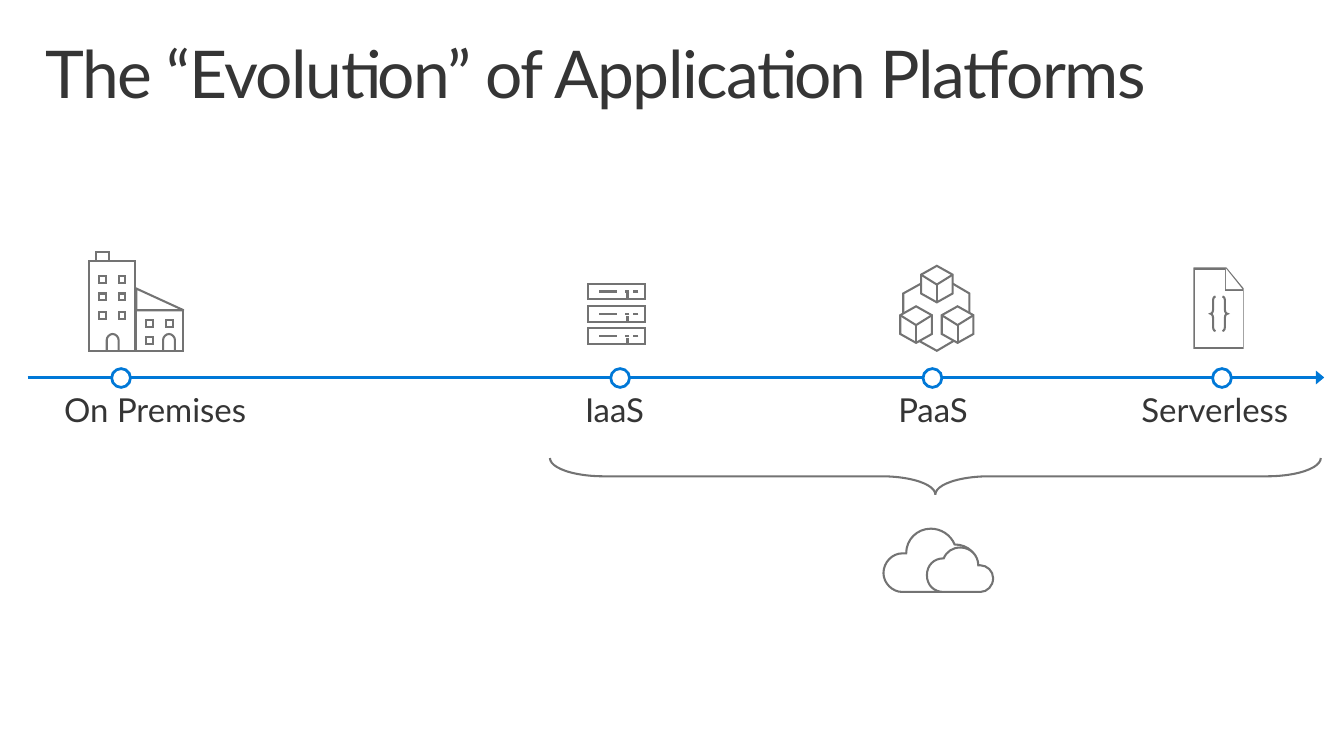
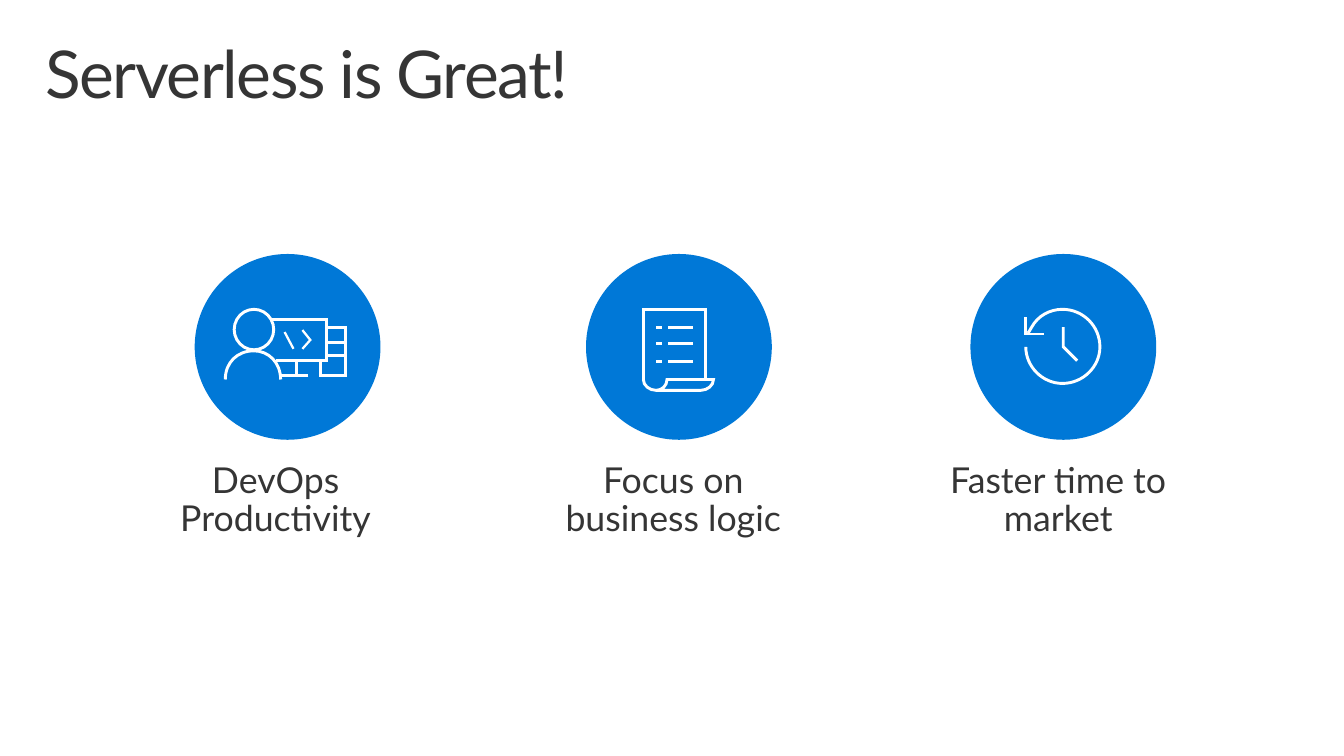
from dataclasses import dataclass
from typing import Callable, Optional, Sequence

from lxml import etree
from pptx import Presentation
from pptx.dml.color import RGBColor
from pptx.enum import shapes as kinds, text
from pptx.oxml.ns import qn
from pptx.util import Inches, Pt

FONT = "Lato"
INK = RGBColor(0x35, 0x35, 0x35)
BLUE = RGBColor(0x00, 0x78, 0xD7)
GRAY = RGBColor(0x73, 0x73, 0x73)
WHITE = RGBColor(0xFF, 0xFF, 0xFF)
PRESET = kinds.MSO_SHAPE

# A contour step is (x, y) for a line or (x1, y1, x2, y2, x, y) for a Bézier curve.
Contour = Sequence[tuple[float, ...]]


@dataclass(frozen=True)
class Pen:
    color: RGBColor
    width: float


GRAY_PEN = Pen(GRAY, 1.5)
BLUE_PEN = Pen(BLUE, 2)
WHITE_PEN = Pen(WHITE, 2.13)
THIN_WHITE_PEN = Pen(WHITE, 1.63)
PAPER_PEN = Pen(WHITE, 2.25)


@dataclass(frozen=True)
class Station:
    label: str
    label_left: float
    label_width: float
    wrap: bool
    dot_left: float
    draw_icon: Callable


@dataclass(frozen=True)
class Benefit:
    caption: str
    caption_left: float
    caption_width: float
    badge_left: float
    draw_icon: Callable


def apply_pen(shape, pen: Pen):
    """Set colour, width and sharp corners; return the a:ln element."""
    shape.line.color.rgb = pen.color
    shape.line.width = Pt(pen.width)
    outline = shape.element.spPr.find(qn("a:ln"))
    etree.SubElement(outline, qn("a:miter"), lim="800000")
    return outline


def paint(shape, pen: Optional[Pen], fill: Optional[RGBColor] = None):
    shape.shadow.inherit = False
    if fill is None:
        shape.fill.background()
    else:
        shape.fill.solid()
        shape.fill.fore_color.rgb = fill
    if pen is None:
        shape.line.fill.background()
    else:
        apply_pen(shape, pen)
    return shape


def add_preset(parent, kind, left: float, top: float, width: float, height: float,
               pen: Optional[Pen], fill: Optional[RGBColor] = None):
    shape = parent.add_shape(kind, Inches(left), Inches(top), Inches(width), Inches(height))
    return paint(shape, pen, fill)


def add_line(parent, start: tuple[float, float], end: tuple[float, float], pen: Pen,
             arrow: bool = False) -> None:
    line = parent.add_connector(kinds.MSO_CONNECTOR.STRAIGHT,
                                *(Inches(value) for value in start + end))
    outline = apply_pen(line, pen)
    if arrow:
        etree.SubElement(outline, qn("a:tailEnd"), type="triangle", w="lg", len="med")
    etree.SubElement(line.element.spPr, qn("a:effectLst"))


def bend(shape, steps: Contour) -> None:
    """Turn the straight segments of a freeform into curves where a step asks for it."""
    segments = list(shape.element.iter(qn("a:lnTo")))
    for segment, step in zip(segments, steps):
        if len(step) == 6:
            segment.tag = qn("a:cubicBezTo")
            for index in (0, 1):
                x, y = step[2 * index:2 * index + 2]
                control = etree.Element(qn("a:pt"), x=str(Inches(x) - shape.left),
                                        y=str(Inches(y) - shape.top))
                segment.insert(index, control)


def add_outline(parent, contours: Sequence[Contour], pen: Pen,
                fill: Optional[RGBColor] = None, closed: bool = False) -> None:
    first, *others = [[(Inches(step[-2]), Inches(step[-1])) for step in contour]
                      for contour in contours]
    builder = parent.build_freeform(*first[0], scale=1.0)
    builder.add_line_segments(first[1:], close=closed)
    for points in others:
        builder.move_to(*points[0])
        builder.add_line_segments(points[1:], close=closed)
    shape = paint(builder.convert_to_shape(), pen, fill)
    bend(shape, [step for contour in contours for step in contour[1:]])


def add_text(page, words: str, left: float, top: float, width: float, height: float,
             size: float, insets: tuple[float, float, float, float], wrap: bool = True,
             grow: bool = True, space_after: float = 0, align=text.PP_ALIGN.LEFT):
    box = page.shapes.add_textbox(Inches(left), Inches(top), Inches(width), Inches(height))
    frame = box.text_frame
    frame.margin_left, frame.margin_top, frame.margin_right, frame.margin_bottom = (
        Inches(inset) for inset in insets)
    frame.word_wrap = wrap
    frame.auto_size = (text.MSO_AUTO_SIZE.SHAPE_TO_FIT_TEXT if grow
                       else text.MSO_AUTO_SIZE.NONE)
    frame.text = words
    para = frame.paragraphs[0]
    para.alignment = align
    para.line_spacing = 0.9
    para.space_after = Pt(space_after)
    span = para.runs[0]
    span.font.name = FONT
    span.font.size = Pt(size)
    span.font.color.rgb = INK
    return span


def add_page(deck, title: str):
    page = deck.slides.add_slide(deck.slide_layouts[6])
    page.background.fill.solid()
    page.background.fill.fore_color.rgb = WHITE
    span = add_text(page, title, 0.3, 0.32, 13, 1, 48, (0.16, 0.1, 0.16, 0.1), grow=False)
    span.font._element.set("spc", "-104")
    return page


def draw_office(icon) -> None:
    def rect(left: float, top: float, width: float, height: float) -> None:
        add_preset(icon, PRESET.RECTANGLE, left, top, width, height, GRAY_PEN)

    rect(0.9, 2.64, 0.47, 0.91)
    rect(0.97, 2.55, 0.13, 0.09)
    rect(1.38, 3.14, 0.47, 0.41)
    windows = [(x, y) for y in (2.79, 2.97, 3.16) for x in (1, 1.2)]
    for x, y in windows + [(1.48, 3.24), (1.68, 3.24), (1.48, 3.41)]:
        rect(x, y, 0.07, 0.07)
    for x in (1.08, 1.65):
        add_outline(icon, [[(x + 0.12, 3.55), (x + 0.12, 3.44),
                            (x + 0.12, 3.41, x + 0.09, 3.38, x + 0.06, 3.38),
                            (x + 0.03, 3.38, x, 3.41, x, 3.44), (x, 3.55)]], GRAY_PEN)
    roof = add_preset(icon, PRESET.ISOSCELES_TRIANGLE, 1.38, 2.92, 0.48, 0.22, GRAY_PEN)
    roof.adjustments[0] = 0


def draw_servers(icon) -> None:
    for index in range(3):
        top = 2.87 + 0.225 * index
        middle = top + 0.08
        add_preset(icon, PRESET.RECTANGLE, 5.95, top, 0.58, 0.16, GRAY_PEN)
        for start, end in ((6.46, 6.41), (6.37, 6.32), (6.24, 6.06)):
            add_line(icon, (start, middle), (end, middle), GRAY_PEN)
        add_line(icon, (6.35, top + 0.16), (6.35, top + 0.1), GRAY_PEN)


def draw_cubes(icon) -> None:
    for x, y in ((9.69, 3.1), (9.27, 3.1), (9.48, 2.69)):
        left, right, shoulder, foot = x - 0.16, x + 0.16, y + 0.09, y + 0.28
        add_outline(icon, [[(left, shoulder), (x, y), (right, shoulder), (right, foot),
                            (x, y + 0.37), (left, foot)]], GRAY_PEN, closed=True)
        add_outline(icon, [[(right, shoulder), (x, y + 0.19), (left, shoulder)]], GRAY_PEN)
        add_line(icon, (x, y + 0.18), (x, y + 0.37), GRAY_PEN)
    for link in ([(9.65, 3.45), (9.48, 3.55), (9.3, 3.45)],
                 [(9.64, 2.87), (9.81, 2.97), (9.81, 3.17)],
                 [(9.14, 3.17), (9.14, 2.97), (9.32, 2.87)]):
        add_outline(icon, [link], GRAY_PEN)


def draw_code_file(icon) -> None:
    border = [(12.6, 2.91), (12.42, 2.69), (12.06, 2.69), (12.06, 3.55), (12.6, 3.55)]
    fold = [(12.42, 2.76), (12.54, 2.91), (12.42, 2.91)]
    sheet = [(12.11, 3.5), (12.11, 2.75), (12.38, 2.75), (12.38, 2.96), (12.56, 2.96),
             (12.56, 3.5)]
    add_outline(icon, [border, fold, sheet], PAPER_PEN, GRAY, closed=True)
    for kind, left in ((PRESET.LEFT_BRACE, 12.25), (PRESET.RIGHT_BRACE, 12.37)):
        brace = add_preset(icon, kind, left, 3, 0.05, 0.35, GRAY_PEN)
        brace.adjustments[0] = 0.8


def draw_clouds(page) -> None:
    add_outline(page.shapes, [[
        (9.17, 5.6), (9.17, 5.46, 9.28, 5.35, 9.42, 5.35),
        (9.52, 5.35, 9.62, 5.41, 9.66, 5.51), (9.8, 5.51, 9.9, 5.61, 9.9, 5.75),
        (9.9, 5.88, 9.8, 5.99, 9.66, 5.99), (9.13, 5.99),
        (9.03, 5.99, 8.94, 5.9, 8.94, 5.8), (8.94, 5.69, 9.03, 5.6, 9.13, 5.6),
    ]], GRAY_PEN, closed=True)
    add_outline(page.shapes, [[
        (9.9, 5.72), (9.9, 5.62, 9.82, 5.54, 9.72, 5.54),
        (9.64, 5.54, 9.58, 5.58, 9.55, 5.65), (9.45, 5.65, 9.38, 5.72, 9.38, 5.82),
        (9.38, 5.92, 9.45, 5.99, 9.55, 5.99), (9.92, 5.99),
        (9.99, 5.99, 10.05, 5.93, 10.05, 5.85), (10.05, 5.78, 9.99, 5.72, 9.92, 5.72),
    ]], GRAY_PEN, WHITE, closed=True)


def draw_developer(icon) -> None:
    add_preset(icon, PRESET.OVAL, 2.37, 3.13, 0.4, 0.41, WHITE_PEN)
    shoulders = [(2.84, 3.84), (2.84, 3.67, 2.72, 3.55, 2.57, 3.55),
                 (2.4, 3.55, 2.28, 3.67, 2.28, 3.84)]
    screen = [(2.79, 3.65), (3.3, 3.65), (3.3, 3.23), (2.74, 3.23)]
    tower = [(3.3, 3.31), (3.5, 3.31), (3.5, 3.8), (3.24, 3.8), (3.24, 3.65)]
    for contour in (shoulders, screen, tower):
        add_outline(icon, [contour], WHITE_PEN)
    for start, end in (((3, 3.8), (3, 3.65)), ((3.12, 3.8), (2.82, 3.8)),
                       ((3.5, 3.47), (3.3, 3.47)), ((3.5, 3.6), (3.3, 3.6))):
        add_line(icon, start, end, WHITE_PEN)
    add_line(icon, (2.88, 3.36), (2.97, 3.53), THIN_WHITE_PEN)
    add_outline(icon, [[(3.06, 3.34), (3.14, 3.44), (3.06, 3.53)]], THIN_WHITE_PEN)


def draw_scroll(icon) -> None:
    curl = [(6.51, 3.84), (6.51, 3.9, 6.57, 3.95, 6.64, 3.95),
            (6.7, 3.95, 6.75, 3.9, 6.75, 3.84), (7.22, 3.84),
            (7.22, 3.9, 7.16, 3.95, 7.09, 3.95), (6.64, 3.95)]
    sheet = [(6.51, 3.85), (6.51, 3.13), (7.14, 3.13), (7.14, 3.84)]
    for contour in (curl, sheet):
        add_outline(icon, [contour], WHITE_PEN)
    for y in (3.31, 3.48, 3.66):
        for start, end in ((6.64, 6.7), (6.76, 7.01)):
            add_line(icon, (start, y), (end, y), WHITE_PEN)


def draw_clock(icon) -> None:
    dial = [(10.4, 3.37), (10.41, 3.36), (10.42, 3.34, 10.43, 3.33, 10.44, 3.31),
            (10.5, 3.2, 10.62, 3.13, 10.75, 3.13), (10.96, 3.13, 11.13, 3.3, 11.13, 3.51),
            (11.13, 3.71, 10.96, 3.88, 10.75, 3.88), (10.55, 3.88, 10.38, 3.71, 10.38, 3.51)]
    hands = [(10.76, 3.31), (10.76, 3.51), (10.9, 3.65)]
    arrow = [(10.56, 3.38), (10.38, 3.38), (10.38, 3.21)]
    for contour in (dial, hands, arrow):
        add_outline(icon, [contour], WHITE_PEN)


STATIONS = (
    Station("On Premises", 0.45, 2.26, False, 1.13, draw_office),
    Station("IaaS", 5.72, 1.03, False, 6.18, draw_servers),
    Station("PaaS", 8.89, 1.13, False, 9.34, draw_cubes),
    Station("Serverless", 11.35, 2.05, True, 12.27, draw_code_file),
)
BENEFITS = (
    Benefit("DevOps Productivity", 1.4, 2.88, 1.97, draw_developer),
    Benefit("Focus on business logic", 5.38, 2.97, 5.93, draw_scroll),
    Benefit("Faster time to market", 9.39, 2.74, 9.82, draw_clock),
)


def build_evolution(deck) -> None:
    page = add_page(deck, "The “Evolution” of Application Platforms")
    add_line(page.shapes, (0.28, 3.82), (13.4, 3.82), BLUE_PEN, arrow=True)
    for station in STATIONS:
        add_text(page, station.label, station.label_left, 3.83, station.label_width, 0.69,
                 24, (0.2, 0.16, 0.2, 0.16), wrap=station.wrap, space_after=6)
        add_preset(page.shapes, PRESET.OVAL, station.dot_left, 3.73, 0.19, 0.19,
                   BLUE_PEN, WHITE)
        station.draw_icon(page.shapes.add_group_shape().shapes)
    brace = add_preset(page.shapes, PRESET.RIGHT_BRACE, 9.28, 0.92, 0.37, 7.8, GRAY_PEN)
    brace.rotation = 90
    brace.adjustments[0] = 1.47
    draw_clouds(page)


def build_benefits(deck) -> None:
    page = add_page(deck, "Serverless is Great!")
    for benefit in BENEFITS:
        add_text(page, benefit.caption, benefit.caption_left, 4.52, benefit.caption_width,
                 1.13, 26, (0.1, 0.16, 0.2, 0.16), space_after=12.2,
                 align=text.PP_ALIGN.CENTER)
        icon = page.shapes.add_group_shape().shapes
        add_preset(icon, PRESET.OVAL, benefit.badge_left, 2.57, 1.88, 1.88, None, BLUE)
        benefit.draw_icon(icon)


def main() -> None:
    deck = Presentation()
    deck.slide_width, deck.slide_height = Inches(13.6), Inches(7.65)
    build_evolution(deck)
    build_benefits(deck)
    deck.save("out.pptx")


if __name__ == "__main__":
    main()
